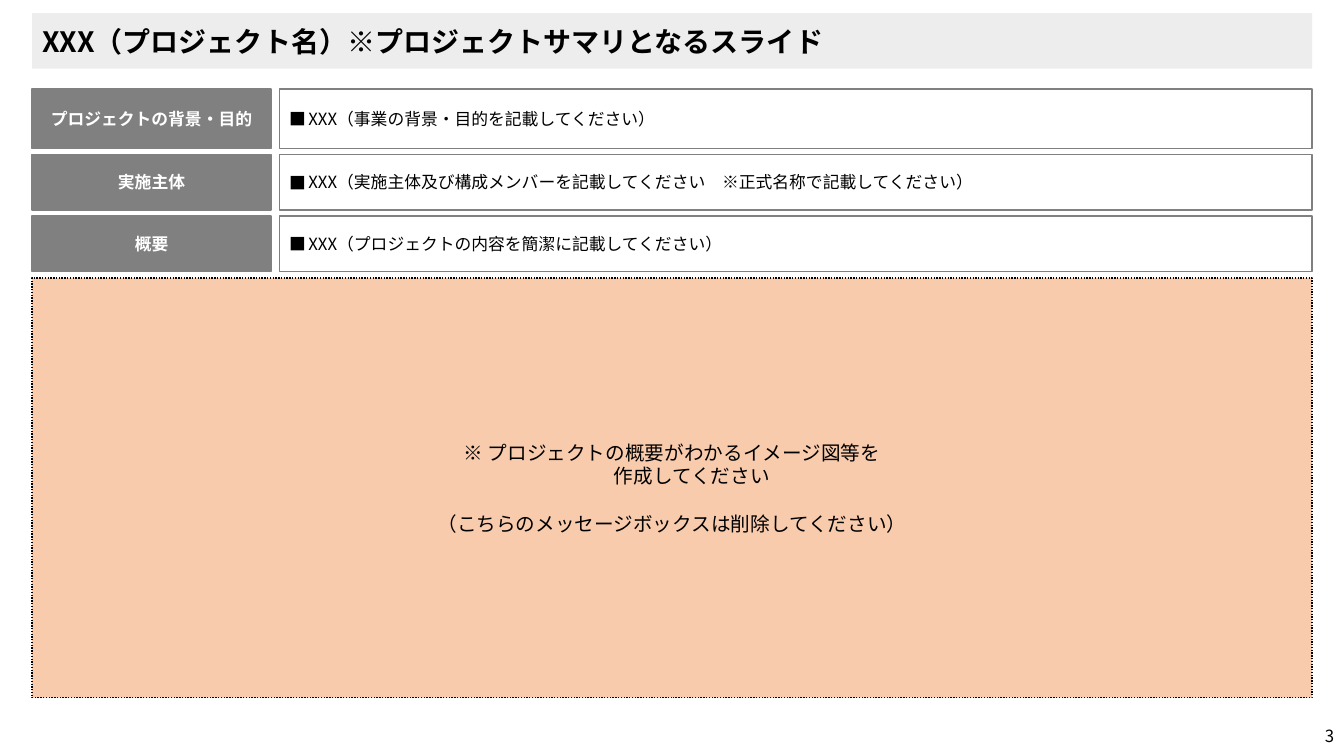
from dataclasses import dataclass

from pptx import Presentation
from pptx.dml.color import RGBColor
from pptx.enum.dml import MSO_LINE
from pptx.enum.shapes import MSO_SHAPE
from pptx.enum.text import MSO_ANCHOR, PP_ALIGN
from pptx.oxml.ns import qn
from pptx.shapes.autoshape import Shape
from pptx.slide import Slide
from pptx.util import Cm, Pt

FONT = "Noto Sans CJK JP"
COLORS = {
    "title_band": "EDEDED",
    "label": "808080",
    "message": "F8CBAD",
    "dark": "000000",
    "light": "FFFFFF",
}
LEFT, FULL_WIDTH = 0.81, 32.26
LABEL_WIDTH, CONTENT_LEFT = 6.02, 7.04
ROWS_TOP, ROW_GAP = 2.24, 0.15
MESSAGE_TOP, MESSAGE_HEIGHT = 7.01, 10.57
MESSAGE_PITCH = 17


@dataclass
class Row:
    label: str
    content: str
    height: float


@dataclass
class Line:
    text: str
    indent: float = 0
    space_before: float = 0


ROWS = [
    Row("プロジェクトの背景・目的", "XXX（事業の背景・目的を記載してください）", 1.5),
    Row("実施主体", "XXX（実施主体及び構成メンバーを記載してください　※正式名称で記載してください）", 1.4),
    Row("概要", "XXX（プロジェクトの内容を簡潔に記載してください）", 1.4),
]
MESSAGE = [
    Line("※ プロジェクトの概要がわかるイメージ図等を"),
    Line("作成してください", indent=0.99),
    Line("（こちらのメッセージボックスは削除してください）", space_before=MESSAGE_PITCH),
]


def rgb(name: str) -> RGBColor:
    return RGBColor.from_string(COLORS[name])


def add_box(page: Slide, left: float, top: float, width: float, height: float,
            fill: str | None = None, line: str | None = None) -> Shape:
    box = page.shapes.add_shape(MSO_SHAPE.RECTANGLE, Cm(left), Cm(top), Cm(width), Cm(height))
    box.shadow.inherit = False
    if fill:
        box.fill.solid()
        box.fill.fore_color.rgb = rgb(fill)
    else:
        box.fill.background()
    if line:
        box.line.color.rgb = rgb(line)
        box.line.width = Pt(1)
    else:
        box.line.fill.background()
    box.text_frame.word_wrap = True
    box.text_frame.vertical_anchor = MSO_ANCHOR.MIDDLE
    return box


def add_span(para, text: str, size: float, color: str = "dark", bold: bool = False,
             align: PP_ALIGN = PP_ALIGN.LEFT) -> None:
    para.alignment = align
    span = para.add_run()
    span.text = text
    span.font.size = Pt(size)
    span.font.bold = bold
    span.font.color.rgb = rgb(color)
    span.font.name = FONT
    east_asian = span.font._element.makeelement(qn("a:ea"), {"typeface": FONT})
    span.font._element.find(qn("a:latin")).addnext(east_asian)


def set_indent(para, left: float, first: float = 0) -> None:
    properties = para._p.get_or_add_pPr()
    properties.set("marL", str(Cm(left)))
    properties.set("indent", str(Cm(first)))


def add_bullet(para) -> None:
    set_indent(para, 0.48, -0.48)
    properties = para._p.get_or_add_pPr()
    properties.append(properties.makeelement(qn("a:buFont"), {"typeface": FONT}))
    properties.append(properties.makeelement(qn("a:buChar"), {"char": "■"}))


def add_title(page: Slide) -> None:
    box = add_box(page, LEFT, 0.33, FULL_WIDTH, 1.4, fill="title_band")
    add_span(box.text_frame.paragraphs[0],
             "XXX（プロジェクト名）※プロジェクトサマリとなるスライド", 20, bold=True)


def add_row(page: Slide, row: Row, top: float) -> None:
    label = add_box(page, LEFT, top, LABEL_WIDTH, row.height, "label", "label")
    label.text_frame.word_wrap = False
    add_span(label.text_frame.paragraphs[0], row.label, 12, "light", True, PP_ALIGN.CENTER)

    content_width = LEFT + FULL_WIDTH - CONTENT_LEFT
    content = add_box(page, CONTENT_LEFT, top, content_width, row.height, line="label")
    para = content.text_frame.paragraphs[0]
    add_bullet(para)
    add_span(para, row.content, 12)


def add_message(page: Slide) -> None:
    box = add_box(page, LEFT, MESSAGE_TOP, FULL_WIDTH, MESSAGE_HEIGHT, "message", "dark")
    box.line.dash_style = MSO_LINE.ROUND_DOT
    frame = box.text_frame
    for index, line in enumerate(MESSAGE):
        para = frame.add_paragraph() if index else frame.paragraphs[0]
        para.line_spacing = Pt(MESSAGE_PITCH)
        if line.space_before:
            para.space_before = Pt(line.space_before)
        if line.indent:
            set_indent(para, line.indent)
        add_span(para, line.text, 14, align=PP_ALIGN.CENTER)


def add_page_number(page: Slide) -> None:
    box = page.shapes.add_textbox(Cm(27.69), Cm(18.03), Cm(6.18), Cm(1.02))
    box.text_frame.word_wrap = True
    box.text_frame.vertical_anchor = MSO_ANCHOR.MIDDLE
    add_span(box.text_frame.paragraphs[0], "3", 12, align=PP_ALIGN.RIGHT)


def main() -> None:
    deck = Presentation()
    deck.slide_width, deck.slide_height = Cm(33.87), Cm(19.05)
    page = deck.slides.add_slide(deck.slide_layouts[6])
    add_title(page)
    top = ROWS_TOP
    for row in ROWS:
        add_row(page, row, top)
        top += row.height + ROW_GAP
    add_message(page)
    add_page_number(page)
    deck.save("out.pptx")


if __name__ == "__main__":
    main()
